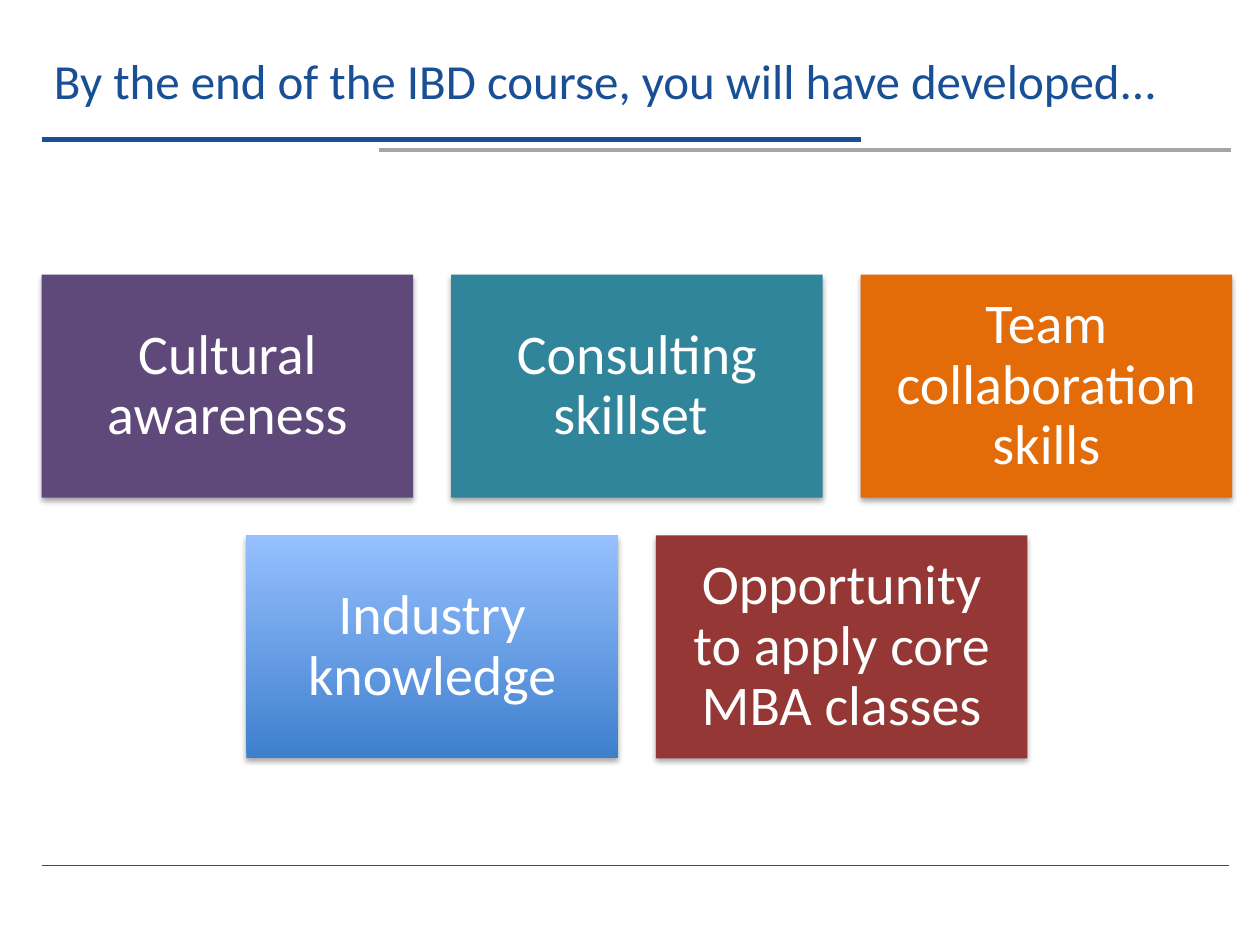
from lxml.etree import SubElement
from pptx import Presentation
from pptx.dml.color import RGBColor
from pptx.enum.shapes import MSO_CONNECTOR, MSO_SHAPE
from pptx.enum.text import MSO_ANCHOR, PP_ALIGN
from pptx.oxml.ns import qn
from pptx.util import Inches, Pt

NAVY = RGBColor(0x18, 0x4F, 0x95)
GREY = RGBColor(0xA5, 0xA5, 0xA5)
WHITE = RGBColor(0xFF, 0xFF, 0xFF)
PURPLE = RGBColor(0x5F, 0x49, 0x7A)
TEAL = RGBColor(0x31, 0x85, 0x9B)
ORANGE = RGBColor(0xE3, 0x6C, 0x09)
RED = RGBColor(0x95, 0x37, 0x34)
DEEP_BLUE = RGBColor(0x3E, 0x7F, 0xCD)
LIGHT_BLUE = RGBColor(0x96, 0xC0, 0xFF)

LEFT, TOP = 0.33, 2.18
CARD_WIDTH, CARD_HEIGHT, GAP = 2.95, 1.77, 0.3
COLUMNS = 3

ROWS = [
    [
        ("Cultural awareness", [PURPLE]),
        ("Consulting skillset ", [TEAL]),
        ("Team collaboration skills", [ORANGE]),
    ],
    [
        ("Industry knowledge", [DEEP_BLUE, LIGHT_BLUE]),
        ("Opportunity to apply core MBA classes", [RED]),
    ],
]
RULES = [
    (LEFT, 6.83, 1.11, NAVY, 3),
    (3.01, 9.77, 1.19, GREY, 2.25),
    (LEFT, 9.75, 6.87, NAVY, 1),
]


def style_text(frame, text, size, color):
    frame.text = text
    frame.word_wrap = True
    frame.vertical_anchor = MSO_ANCHOR.MIDDLE
    font = frame.paragraphs[0].runs[0].font
    font.name = "Calibri"
    font.size = Pt(size)
    font.color.rgb = color


def add_soft_shadow(shape):
    shape.shadow.inherit = False
    effects = shape._element.spPr.find(qn("a:effectLst"))
    shadow = SubElement(effects, qn("a:outerShdw"), blurRad=str(Pt(3.1)),
                        dist=str(Pt(1.8)), dir="5400000", rotWithShape="0")
    black = SubElement(shadow, qn("a:srgbClr"), val="000000")
    SubElement(black, qn("a:alpha"), val="35000")


prs = Presentation()
prs.slide_width = Inches(10)
prs.slide_height = Inches(7.5)
slide = prs.slides.add_slide(prs.slide_layouts[6])

for start, end, height, color, weight in RULES:
    rule = slide.shapes.add_connector(
        MSO_CONNECTOR.STRAIGHT, Inches(start), Inches(height), Inches(end), Inches(height))
    rule.line.color.rgb = color
    rule.line.width = Pt(weight)
    SubElement(rule._element.spPr, qn("a:effectLst"))

title = slide.shapes.add_textbox(Inches(LEFT), Inches(0.22), Inches(9.17), Inches(0.82))
style_text(title.text_frame, "By the end of the IBD course, you will have developed...", 28, NAVY)

for row, cards in enumerate(ROWS):
    indent = (COLUMNS - len(cards)) / 2
    for column, (skill, colors) in enumerate(cards):
        card = slide.shapes.add_shape(
            MSO_SHAPE.RECTANGLE,
            Inches(LEFT + (column + indent) * (CARD_WIDTH + GAP)),
            Inches(TOP + row * (CARD_HEIGHT + GAP)),
            Inches(CARD_WIDTH), Inches(CARD_HEIGHT))
        if len(colors) > 1:
            card.fill.gradient()
            card.fill.gradient_angle = 90
            for stop, color in zip(card.fill.gradient_stops, colors):
                stop.color.rgb = color
        else:
            card.fill.solid()
            card.fill.fore_color.rgb = colors[0]
        card.line.fill.background()
        add_soft_shadow(card)
        frame = card.text_frame
        style_text(frame, skill, 32, WHITE)
        frame.margin_left = frame.margin_right = Inches(0.13)
        frame.margin_top = frame.margin_bottom = Inches(0.13)
        frame.paragraphs[0].alignment = PP_ALIGN.CENTER
        frame.paragraphs[0].line_spacing = 0.9

prs.save("out.pptx")
